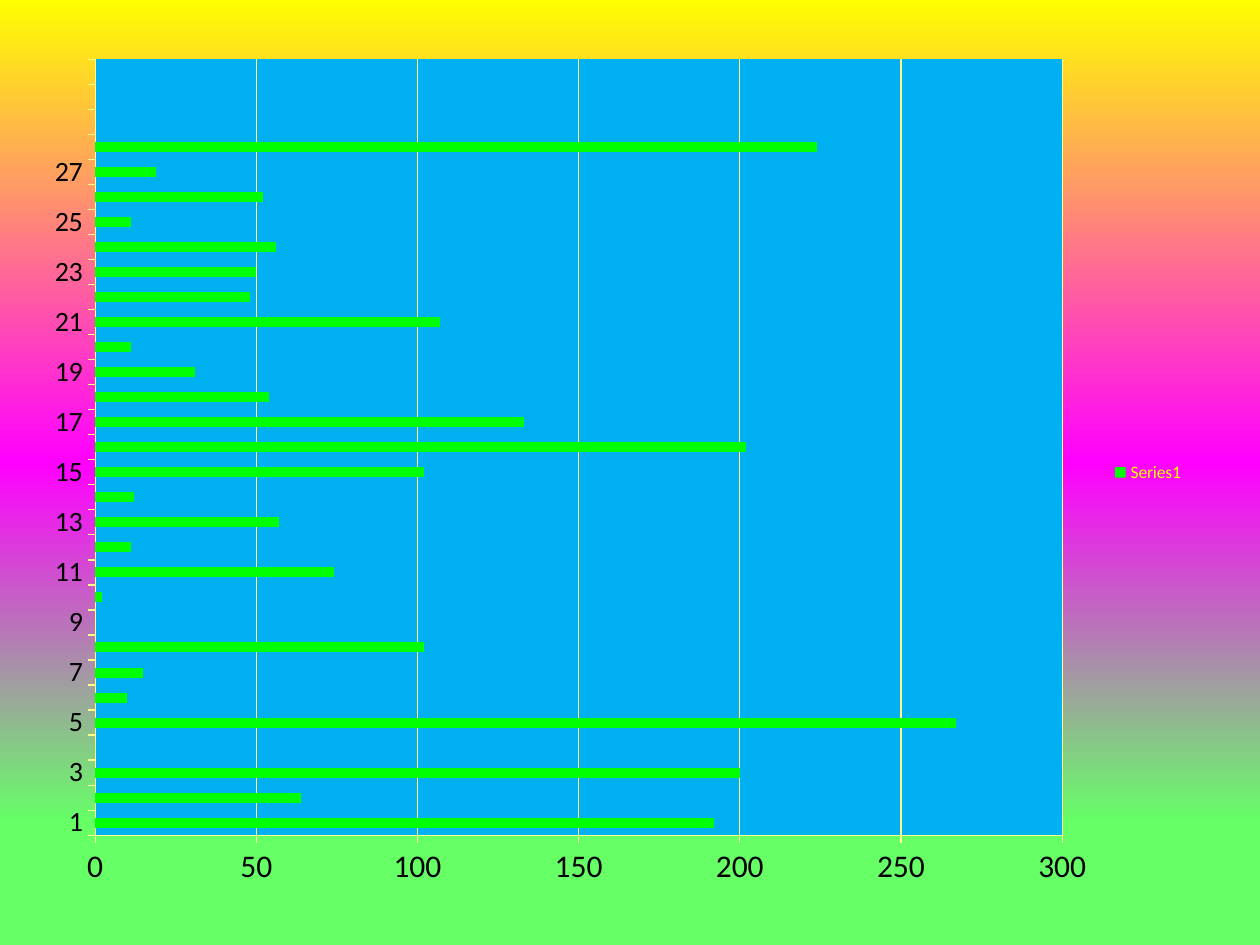
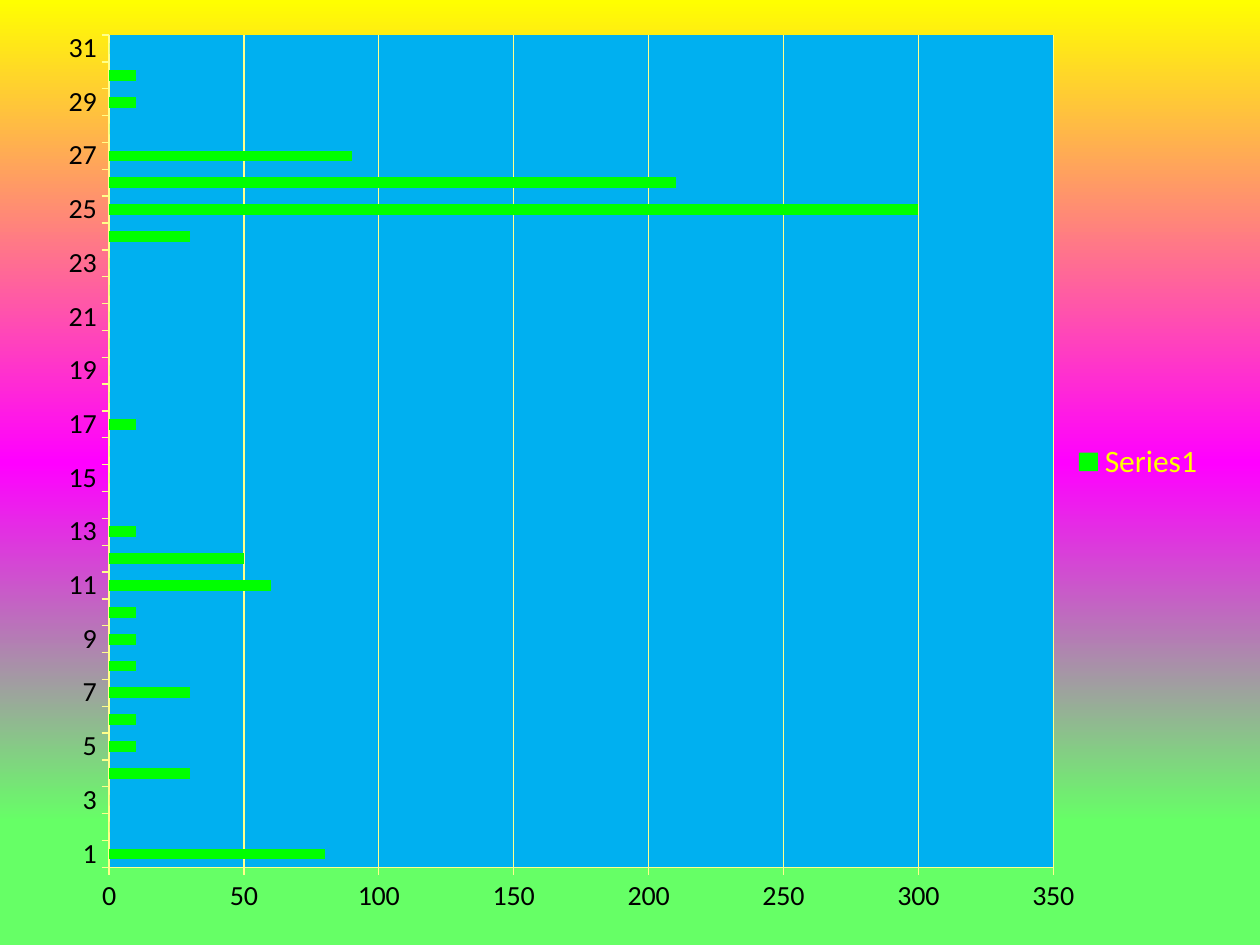
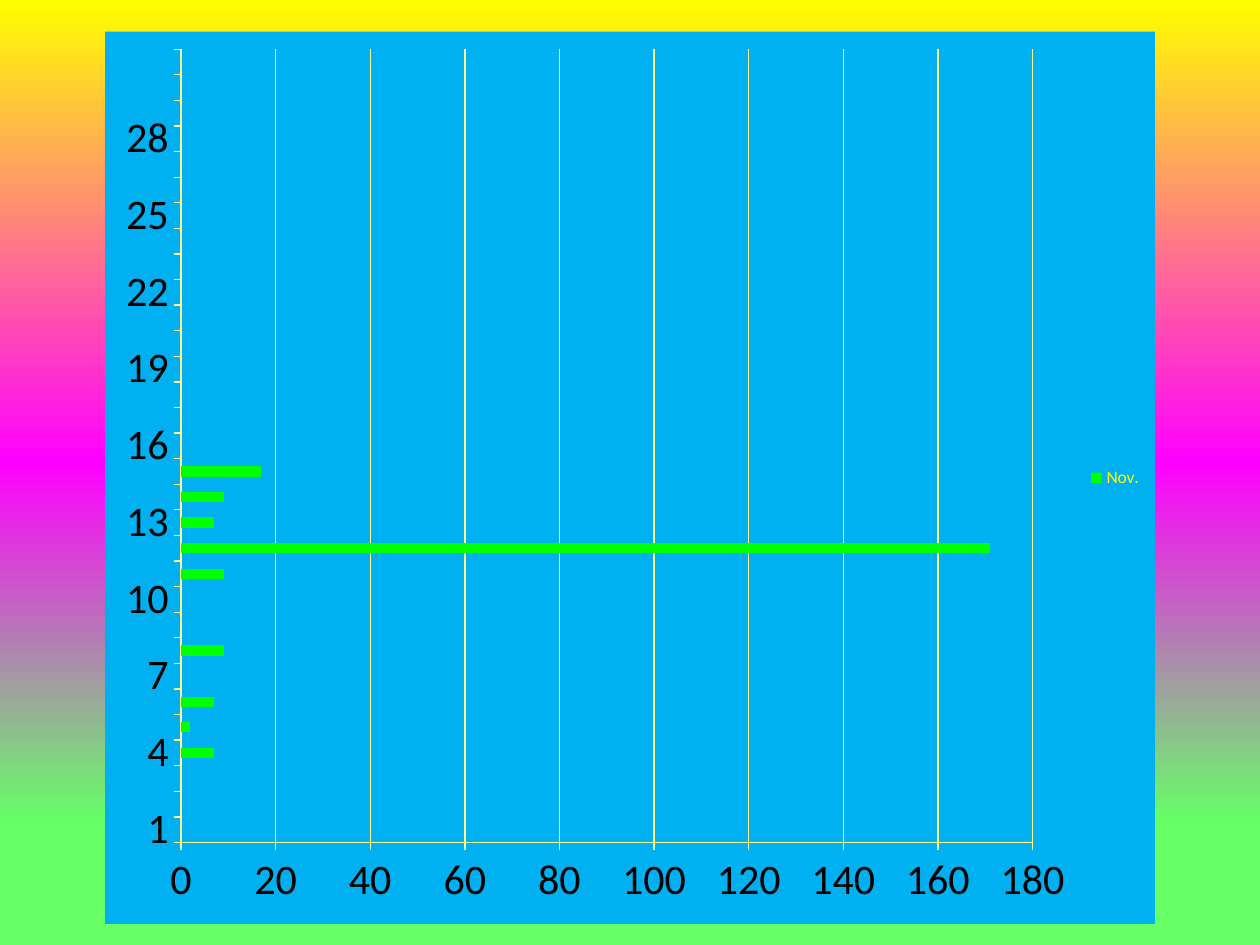
import copy

import pptx
import pptx.chart.data
import pptx.dml.color
import pptx.enum.chart
import pptx.oxml
import pptx.oxml.ns
import pptx.util

Pt = pptx.util.Pt
RGBColor = pptx.dml.color.RGBColor
XL = pptx.enum.chart
qn = pptx.oxml.ns.qn

YELLOW = RGBColor(0xFF, 0xFF, 0x00)
MAGENTA = RGBColor(0xFF, 0x00, 0xFF)
LIGHT_GREEN = RGBColor(0x66, 0xFF, 0x66)
BAR_GREEN = RGBColor(0x00, 0xFF, 0x00)
SKY = RGBColor(0x00, 0xB0, 0xF0)
PALE_YELLOW = RGBColor(0xFF, 0xFF, 0x8A)
BLACK = RGBColor(0x00, 0x00, 0x00)
FONT = "Calibri"
NS = pptx.oxml.ns.nsdecls("c", "a")
DAYS = 31
STACKED = XL.XL_CHART_TYPE.BAR_STACKED
CLUSTERED = XL.XL_CHART_TYPE.BAR_CLUSTERED


def area_format(color):
    fill = f'<a:solidFill><a:srgbClr val="{color}"/></a:solidFill>' if color else "<a:noFill/>"
    return pptx.oxml.parse_xml(f"<c:spPr {NS}>{fill}<a:ln><a:noFill/></a:ln></c:spPr>")


def set_font(font, size, color):
    font.name = FONT
    font.size = Pt(size)
    font.bold = False
    font.color.rgb = color


CHARTS = [
    dict(type=STACKED, box=(18, 24, 666, 492), name="Series1", last_day=28,
         vals=[192, 64, 200, 0, 267, 10, 15, 102, None, 2, 74, 11, 57, 12, 102, 202,
               133, 54, 31, 11, 107, 48, 50, 56, 11, 52, 19, 224, None, None, None],
         cat_size=16, val_size=18, legend_size=10, top=300, step=50,
         plot_fill=SKY, chart_fill=None, inner=None),
    dict(type=STACKED, box=(24, 12, 672, 510), name="Series1", last_day=31,
         vals=[80, 0, 0, 30, 10, 10, 30, 10, 10, 10, 60, 50, 10, 0, 0, 0,
               10, 0, 0, 0, 0, 0, 0, 30, 300, 210, 90, 0, 10, 10, 0],
         cat_size=16, val_size=16, legend_size=18, top=350, step=50,
         plot_fill=SKY, chart_fill=None, inner=(38.3, 8.2, 539.6, 481.4)),
    dict(type=CLUSTERED, box=(60, 18, 600, 510), name="Nov.", last_day=30,
         vals=[0, 0, None, 7, 2, 7, 0, 9, 0, 0, 9, 171, 7, 9, 17] + [0] * 16,
         cat_size=24, val_size=24, legend_size=10, top=180, step=20,
         plot_fill=None, chart_fill=SKY, inner=None),
]

prs = pptx.Presentation()
prs.slide_width, prs.slide_height = Pt(720), Pt(540)

fill = prs.slide_master.background.fill
fill.gradient()
fill.gradient_angle = 270
last_stop = prs.slide_master.element.find(".//" + qn("p:bg")).findall(".//" + qn("a:gs"))[-1]
last_stop.addnext(copy.deepcopy(last_stop))
stops = [(0, YELLOW), (0.49, MAGENTA), (0.87, LIGHT_GREEN)]
for stop, (position, color) in zip(fill.gradient_stops, stops):
    stop.position = position
    stop.color.rgb = color

for c in CHARTS:
    s = prs.slides.add_slide(prs.slide_layouts[6])
    data = pptx.chart.data.CategoryChartData()
    data.categories = [str(d) if d <= c["last_day"] else "" for d in range(1, DAYS + 1)]
    data.add_series(c["name"], c["vals"])
    chart = s.shapes.add_chart(c["type"], *[Pt(v) for v in c["box"]], data).chart
    chart.has_title = False
    set_font(chart.font, 10, YELLOW)

    chart.has_legend = True
    chart.legend.position = XL.XL_LEGEND_POSITION.RIGHT
    chart.legend.include_in_layout = False
    set_font(chart.legend.font, c["legend_size"], YELLOW)

    plot = chart.plots[0]
    plot.gap_width = 150
    plot.vary_by_categories = False
    bars = plot.series[0].format
    bars.fill.solid()
    bars.fill.fore_color.rgb = BAR_GREEN

    axes = [(chart.category_axis, c["cat_size"]), (chart.value_axis, c["val_size"])]
    for axis, size in axes:
        axis.major_tick_mark = XL.XL_TICK_MARK.OUTSIDE
        axis.minor_tick_mark = XL.XL_TICK_MARK.NONE
        axis.format.line.color.rgb = PALE_YELLOW
        axis.format.line.width = Pt(0.75)
        set_font(axis.tick_labels.font, size, BLACK)
    chart.category_axis.has_major_gridlines = False
    chart.value_axis.has_major_gridlines = True
    grid = chart.value_axis.major_gridlines.format.line
    grid.color.rgb = PALE_YELLOW
    grid.width = Pt(0.75)
    chart.value_axis.minimum_scale = 0
    chart.value_axis.maximum_scale = c["top"]
    chart.value_axis.major_unit = c["step"]

    root = chart.element
    root.find(qn("c:chart")).addnext(area_format(c["chart_fill"]))
    area = root.find(".//" + qn("c:plotArea"))
    area.append(area_format(c["plot_fill"]))
    if c["inner"]:
        for old in area.findall(qn("c:layout")):
            area.remove(old)
        width, height = c["box"][2:]
        sizes = "".join(f'<c:{tag} val="{length / whole}"/>' for tag, length, whole
                        in zip("xywh", c["inner"], (width, height, width, height)))
        area.insert(0, pptx.oxml.parse_xml(
            f'<c:layout {NS}><c:manualLayout><c:layoutTarget val="inner"/>'
            f'<c:xMode val="edge"/><c:yMode val="edge"/>{sizes}</c:manualLayout></c:layout>'))

prs.save("out.pptx")
